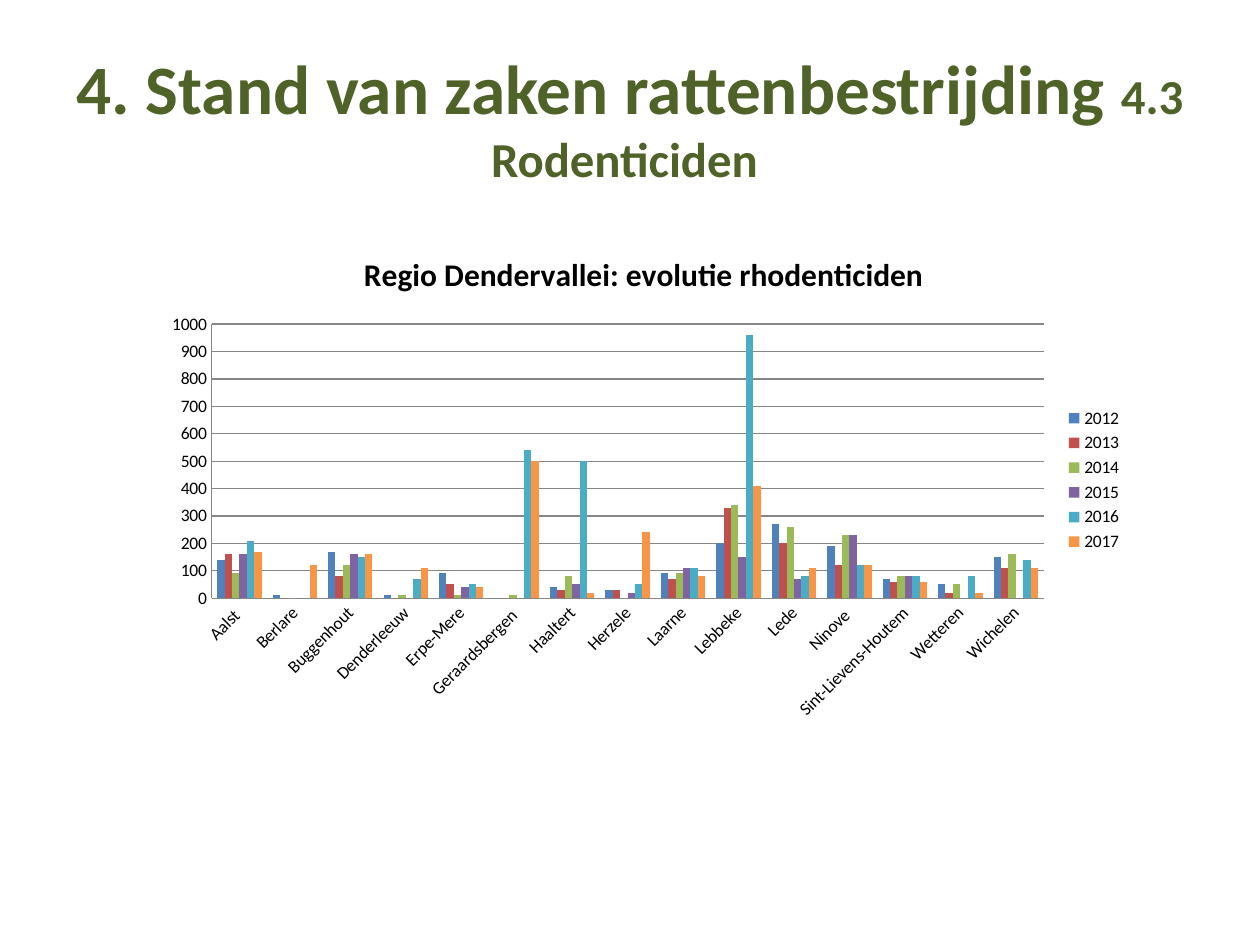
from pptx import Presentation
from pptx.chart.data import CategoryChartData
from pptx.dml.color import RGBColor
from pptx.enum.chart import XL_CHART_TYPE as ChartType
from pptx.enum.chart import XL_LEGEND_POSITION as LegendPosition
from pptx.enum.chart import XL_TICK_MARK as TickMark
from pptx.enum.text import MSO_ANCHOR as Anchor
from pptx.enum.text import PP_ALIGN as Align
from pptx.oxml.ns import qn
from pptx.util import Inches, Pt

FONT = "Calibri"
COLORS = {
    "heading": "4F6228", "text": "000000", "grid": "868686",
    "2012": "4F81BD", "2013": "C0504D", "2014": "9BBB59",
    "2015": "8064A2", "2016": "4BACC6", "2017": "F79646",
}
TOWNS = [
    "Aalst ", "Berlare", "Buggenhout", "Denderleeuw", "Erpe-Mere",
    "Geraardsbergen ", "Haaltert", "Herzele", "Laarne", "Lebbeke", "Lede",
    "Ninove ", "Sint-Lievens-Houtem", "Wetteren", "Wichelen",
]
USAGE = {
    "2012": [140, 10, 170, 10, 90, 0, 40, 30, 90, 200, 270, 190, 70, 50, 150],
    "2013": [160, 0, 80, 0, 50, 0, 30, 30, 70, 330, 200, 120, 60, 20, 110],
    "2014": [90, 0, 120, 10, 10, 10, 80, 0, 90, 340, 260, 230, 80, 50, 160],
    "2015": [160, 0, 160, 0, 40, 0, 50, 20, 110, 150, 70, 230, 80, 0, 0],
    "2016": [210, None, 150, 70, 50, 540, 500, 50, 110, 960, 80, 120, 80, 80, 140],
    "2017": [170, 120, 160, 110, 40, 500, 20, 240, 80, 410, 110, 120, 60, 20, 110],
}


def color(name):
    return RGBColor.from_string(COLORS[name])


def style_font(font, size, color_name, bold=False):
    font.name = FONT
    font.size = Pt(size)
    font.bold = bold
    font.color.rgb = color(color_name)


def add_heading(slide, left, top, width, height):
    frame = slide.shapes.add_textbox(left, top, width, height).text_frame
    frame.word_wrap = True
    frame.vertical_anchor = Anchor.MIDDLE
    paragraph = frame.paragraphs[0]
    paragraph.alignment = Align.CENTER
    for words, size in (("4. Stand van zaken rattenbestrijding ", 39.6),
                        ("4.3 Rodenticiden ", 27.9)):
        run = paragraph.add_run()
        run.text = words
        style_font(run.font, size, "heading", bold=True)


def style_axes(chart):
    towns, amounts = chart.category_axis, chart.value_axis
    for axis in (towns, amounts):
        axis.major_tick_mark = axis.minor_tick_mark = TickMark.NONE
        axis.format.line.color.rgb = color("grid")
        style_font(axis.tick_labels.font, 10, "text")
    label_body = towns._element.find(qn("c:txPr")).find(qn("a:bodyPr"))
    label_body.set("rot", "-2700000")
    label_body.set("vert", "horz")
    amounts.minimum_scale, amounts.maximum_scale = 0, 1000
    amounts.major_unit = 100
    amounts.tick_labels.number_format = "0"
    amounts.tick_labels.number_format_is_linked = False
    amounts.has_major_gridlines = True
    amounts.major_gridlines.format.line.color.rgb = color("grid")


def add_usage_chart(slide, left, top, width, height):
    usage = CategoryChartData(number_format="0")
    usage.categories = TOWNS
    for year, amounts in USAGE.items():
        usage.add_series(year, amounts)
    chart = slide.shapes.add_chart(
        ChartType.COLUMN_CLUSTERED, left, top, width, height, usage).chart
    style_font(chart.font, 10, "text")

    chart.has_title = True
    title = chart.chart_title
    title.include_in_layout = False
    title.text_frame.text = "Regio Dendervallei: evolutie rhodenticiden"
    style_font(title.text_frame.paragraphs[0].runs[0].font, 18, "text", bold=True)

    chart.has_legend = True
    chart.legend.position = LegendPosition.RIGHT
    chart.legend.include_in_layout = False
    style_font(chart.legend.font, 10, "text")

    style_axes(chart)
    plot = chart.plots[0]
    plot.gap_width = 150
    plot.overlap = 0
    plot.vary_by_categories = False
    for series in plot.series:
        series.format.fill.solid()
        series.format.fill.fore_color.rgb = color(series.name)
        series.invert_if_negative = False


def main():
    deck = Presentation()
    deck.slide_width, deck.slide_height = Inches(10), Inches(7.5)
    slide = deck.slides.add_slide(deck.slide_layouts[6])
    add_heading(slide, Inches(0.5), Inches(0.3), Inches(9), Inches(1.25))
    add_usage_chart(slide, Inches(1.21), Inches(1.83), Inches(7.8), Inches(3.96))
    deck.save("out.pptx")


if __name__ == "__main__":
    main()
